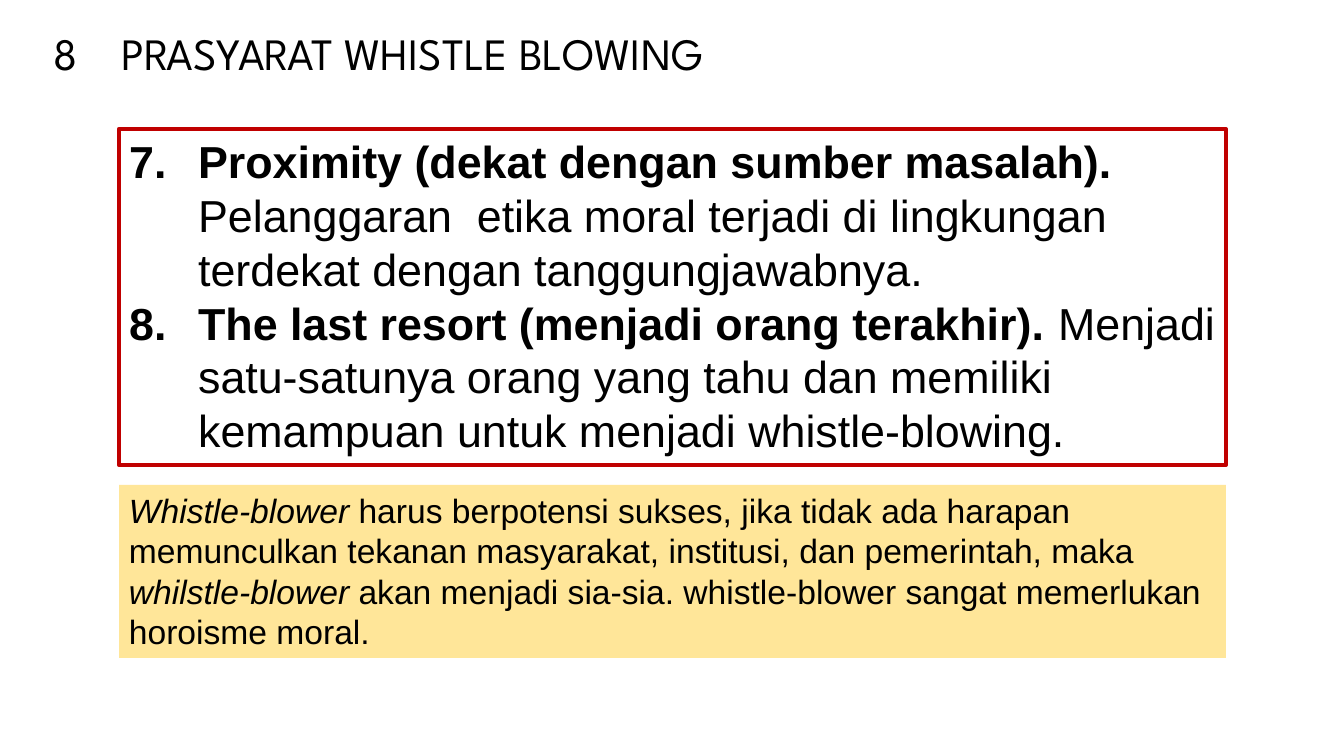
"""Build the slide on the last two prerequisites of whistle blowing."""
import lxml.etree
import pptx
import pptx.dml.color
import pptx.enum.shapes
import pptx.enum.text
import pptx.oxml.ns
import pptx.util

SECTION = "8"
HEADING = "PRASYARAT WHISTLE BLOWING"
FIRST_NUMBER = 7
PREREQUISITES = [
    ("Proximity (dekat dengan sumber masalah). ",
     "Pelanggaran  etika moral terjadi di lingkungan terdekat dengan tanggungjawabnya."),
    ("The last resort (menjadi orang terakhir). ",
     "Menjadi satu-satunya orang yang tahu dan memiliki kemampuan untuk menjadi whistle-blowing."),
]
REMARK = [
    ("Whistle-blower ", True),
    ("harus berpotensi sukses, jika tidak ada harapan memunculkan tekanan masyarakat, "
     "institusi, dan pemerintah, maka ", False),
    ("whilstle-blower ", True),
    ("akan menjadi sia-sia. whistle-blower sangat memerlukan horoisme moral.", False),
]

BLACK = pptx.dml.color.RGBColor(0x00, 0x00, 0x00)
RED = pptx.dml.color.RGBColor(0xC0, 0x00, 0x00)
SAND = pptx.dml.color.RGBColor(0xFF, 0xE6, 0x99)
HEADING_FONT, TEXT_FONT = "League Spartan", "Arial"
PX_PER_INCH = 100.8

SLIDE_SIZE = (1344, 756)
HEADING_TOP, HEADING_HEIGHT = 21, 65
PANEL_LEFT, PANEL_WIDTH = 119, 1107
HANGING_INDENT = 69


def px(length):
    """Turn px into EMU."""
    return pptx.util.Inches(length / PX_PER_INCH)


def place(part, left, top, width, height):
    """Position a part and prepare its text frame."""
    part.left, part.top, part.width, part.height = map(px, (left, top, width, height))
    frame = part.text_frame
    frame.word_wrap = True
    frame.auto_size = pptx.enum.text.MSO_AUTO_SIZE.NONE
    frame.vertical_anchor = pptx.enum.text.MSO_ANCHOR.TOP
    return frame


def style(paragraph, font_name, size):
    """Set the alignment and font of a paragraph."""
    paragraph.alignment = pptx.enum.text.PP_ALIGN.LEFT
    paragraph.font.name = font_name
    paragraph.font.size = pptx.util.Pt(size)
    paragraph.font.color.rgb = BLACK


def number(paragraph):
    """Give a paragraph automatic numbering with a hanging indent."""
    properties = paragraph._p.get_or_add_pPr()
    properties.set("marL", str(px(HANGING_INDENT)))
    properties.set("indent", str(-px(HANGING_INDENT)))
    lxml.etree.SubElement(properties, pptx.oxml.ns.qn("a:buFont"), typeface="+mj-lt")
    lxml.etree.SubElement(properties, pptx.oxml.ns.qn("a:buAutoNum"),
                          type="arabicPeriod", startAt=str(FIRST_NUMBER))


def main():
    """Build and save the slide."""
    deck = pptx.Presentation()
    deck.slide_width, deck.slide_height = map(px, SLIDE_SIZE)
    slide = deck.slides.add_slide(deck.slide_layouts[1])

    section = slide.shapes.add_textbox(0, 0, 0, 0)
    for part, text, left, width in ((section, SECTION, 44, 47),
                                    (slide.shapes.title, HEADING, 111, 744)):
        frame = place(part, left, HEADING_TOP, width, HEADING_HEIGHT)
        frame.text = text
        style(frame.paragraphs[0], HEADING_FONT, 32)

    prerequisites = slide.placeholders[1]
    prerequisites.line.color.rgb = RED
    prerequisites.line.width = pptx.util.Pt(3)
    frame = place(prerequisites, PANEL_LEFT, 129, PANEL_WIDTH, 336)
    for index, (term, meaning) in enumerate(PREREQUISITES):
        paragraph = frame.add_paragraph() if index else frame.paragraphs[0]
        paragraph.space_before = pptx.util.Pt(0)
        number(paragraph)
        style(paragraph, TEXT_FONT, 32)
        for text, bold in ((term, True), (meaning, False)):
            run = paragraph.add_run()
            run.text = text
            run.font.bold = bold

    remark = slide.shapes.add_shape(pptx.enum.shapes.MSO_SHAPE.RECTANGLE, 0, 0, 0, 0)
    remark.shadow.inherit = False
    remark.fill.solid()
    remark.fill.fore_color.rgb = SAND
    remark.line.fill.background()
    paragraph = place(remark, PANEL_LEFT, 485, PANEL_WIDTH, 173).paragraphs[0]
    style(paragraph, TEXT_FONT, 24)
    for text, italic in REMARK:
        run = paragraph.add_run()
        run.text = text
        run.font.italic = italic

    deck.save("out.pptx")


if __name__ == "__main__":
    main()
